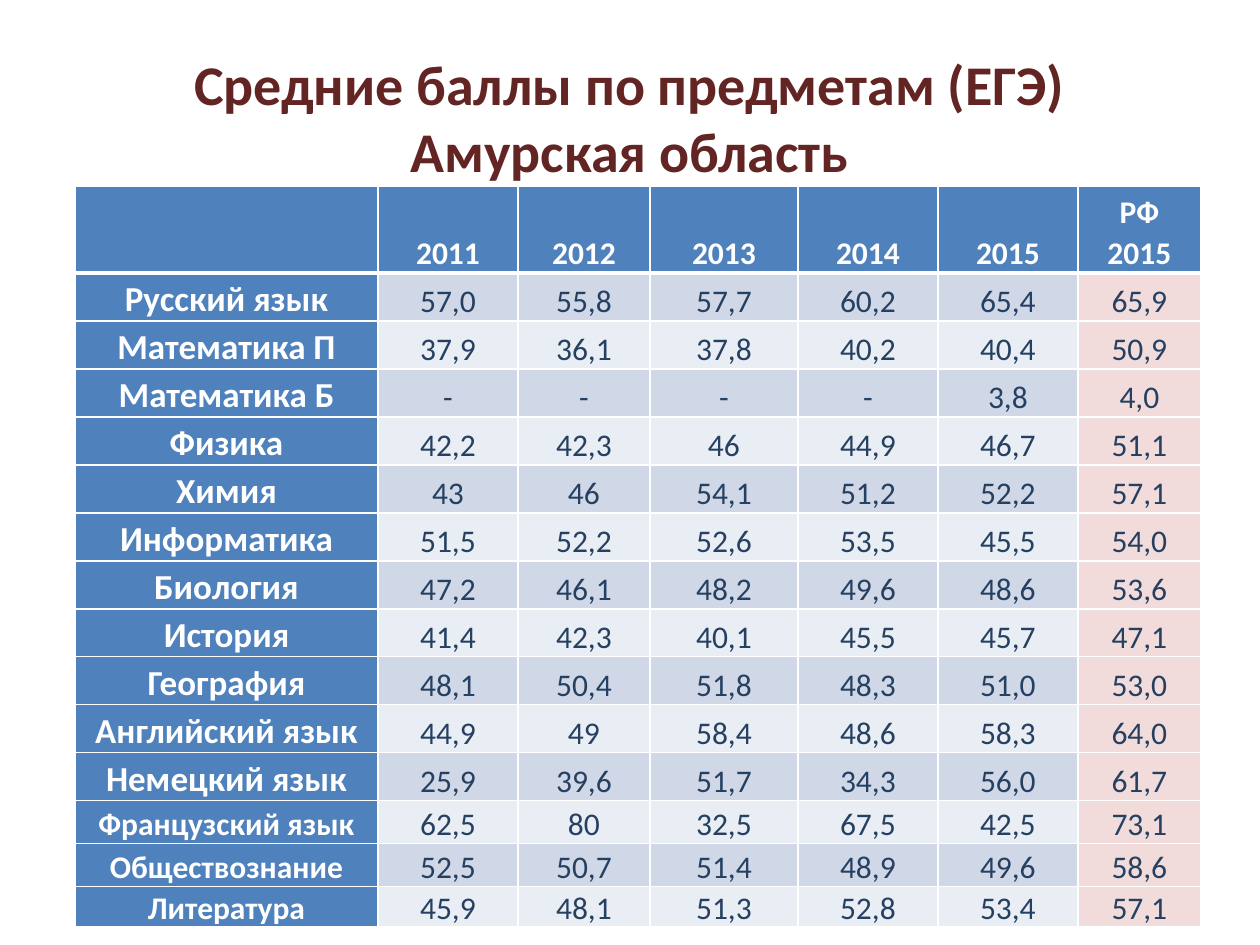
import pptx
import pptx.dml.color
import pptx.enum.text
import pptx.oxml
import pptx.oxml.ns
import pptx.util

RGBColor = pptx.dml.color.RGBColor
WHITE = RGBColor(0xFF, 0xFF, 0xFF)
MAROON = RGBColor(0x63, 0x25, 0x23)
NAVY = RGBColor(0x25, 0x40, 0x61)
BLUE = RGBColor(0x4F, 0x81, 0xBD)
BAND_DARK = RGBColor(0xD0, 0xD8, 0xE8)
BAND_LIGHT = RGBColor(0xE9, 0xED, 0xF4)
PINK = RGBColor(0xF2, 0xDC, 0xDB)

TITLE = "Средние баллы по предметам (ЕГЭ)\vАмурская область"
SCORES = [
    ("", "2011", "2012", "2013", "2014", "2015", "РФ 2015"),
    ("Русский язык", "57,0", "55,8", "57,7", "60,2", "65,4", "65,9"),
    ("Математика П", "37,9", "36,1", "37,8", "40,2", "40,4", "50,9"),
    ("Математика Б", "-", "-", "-", "-", "3,8", "4,0"),
    ("Физика", "42,2", "42,3", "46", "44,9", "46,7", "51,1"),
    ("Химия", "43", "46", "54,1", "51,2", "52,2", "57,1"),
    ("Информатика", "51,5", "52,2", "52,6", "53,5", "45,5", "54,0"),
    ("Биология", "47,2", "46,1", "48,2", "49,6", "48,6", "53,6"),
    ("История", "41,4", "42,3", "40,1", "45,5", "45,7", "47,1"),
    ("География", "48,1", "50,4", "51,8", "48,3", "51,0", "53,0"),
    ("Английский язык", "44,9", "49", "58,4", "48,6", "58,3", "64,0"),
    ("Немецкий язык", "25,9", "39,6", "51,7", "34,3", "56,0", "61,7"),
    ("Французский язык", "62,5", "80", "32,5", "67,5", "42,5", "73,1"),
    ("Обществознание", "52,5", "50,7", "51,4", "48,9", "49,6", "58,6"),
    ("Литература", "45,9", "48,1", "51,3", "52,8", "53,4", "57,1"),
]
LARGE_ROWS = 11
COLUMN_WIDTHS = [303, 140, 132, 148, 140, 140, 123]
ROW_HEIGHTS = [87] + [48] * LARGE_ROWS + [43, 43, 40]
TITLE_BOX = (63, 38, 1134, 157)
TABLE_CORNER = (75, 186)
CELL_FORMAT = {
    "margin_left": 8, "margin_right": 8, "margin_top": 0, "margin_bottom": 0,
}


def px(length):
    return pptx.util.Emu(round(length * 914400 / 126))


def style_paragraph(paragraph, size, color, bold):
    paragraph.alignment = pptx.enum.text.PP_ALIGN.CENTER
    font_format = {"name": "Calibri", "size": pptx.util.Pt(size), "bold": bold}
    for attribute, value in font_format.items():
        setattr(paragraph.font, attribute, value)
    paragraph.font.color.rgb = color


def add_borders(cell, top, bottom):
    """Draw white cell borders; top and bottom are widths in points."""
    properties = cell._tc.get_or_add_tcPr()
    for side, width in (("L", 1), ("R", 1), ("T", top), ("B", bottom)):
        properties.append(pptx.oxml.parse_xml(
            f'<a:ln{side} {pptx.oxml.ns.nsdecls("a")} w="{pptx.util.Pt(width)}">'
            f'<a:solidFill><a:srgbClr val="{WHITE}"/></a:solidFill></a:ln{side}>'))


def cell_fill(row, column):
    if row == 0 or column == 0:
        return BLUE
    if column == len(COLUMN_WIDTHS) - 1:
        return PINK
    return BAND_DARK if row % 2 else BAND_LIGHT


def add_title(slide):
    frame = slide.shapes.add_textbox(*map(px, TITLE_BOX)).text_frame
    frame.word_wrap = True
    frame.vertical_anchor = pptx.enum.text.MSO_ANCHOR.MIDDLE
    frame.text = TITLE
    style_paragraph(frame.paragraphs[0], 32, MAROON, True)


def add_scores(slide):
    extent = (sum(COLUMN_WIDTHS), sum(ROW_HEIGHTS))
    table = slide.shapes.add_table(
        len(SCORES), len(COLUMN_WIDTHS), *map(px, TABLE_CORNER + extent)).table
    for column, width in zip(table.columns, COLUMN_WIDTHS):
        column.width = px(width)
    for row, height in zip(table.rows, ROW_HEIGHTS):
        row.height = px(height)

    for r, scores in enumerate(SCORES):
        for c, score in enumerate(scores):
            cell = table.cell(r, c)
            cell.text = score
            cell.vertical_anchor = pptx.enum.text.MSO_ANCHOR.BOTTOM
            for attribute, value in CELL_FORMAT.items():
                setattr(cell, attribute, px(value))
            add_borders(cell, top=3 if r == 1 else 1, bottom=3 if r == 0 else 1)
            cell.fill.solid()
            cell.fill.fore_color.rgb = cell_fill(r, c)

            heading = r == 0 or c == 0
            size = 20 if c == 0 and 1 <= r <= LARGE_ROWS else 18
            paragraph = cell.text_frame.paragraphs[0]
            style_paragraph(paragraph, size, WHITE if heading else NAVY, heading)
            paragraph.line_spacing = 1.07


def main():
    presentation = pptx.Presentation()
    presentation.slide_width = px(1260)
    presentation.slide_height = px(945)
    slide = presentation.slides.add_slide(presentation.slide_layouts[6])
    add_title(slide)
    add_scores(slide)
    presentation.save("out.pptx")


if __name__ == "__main__":
    main()
